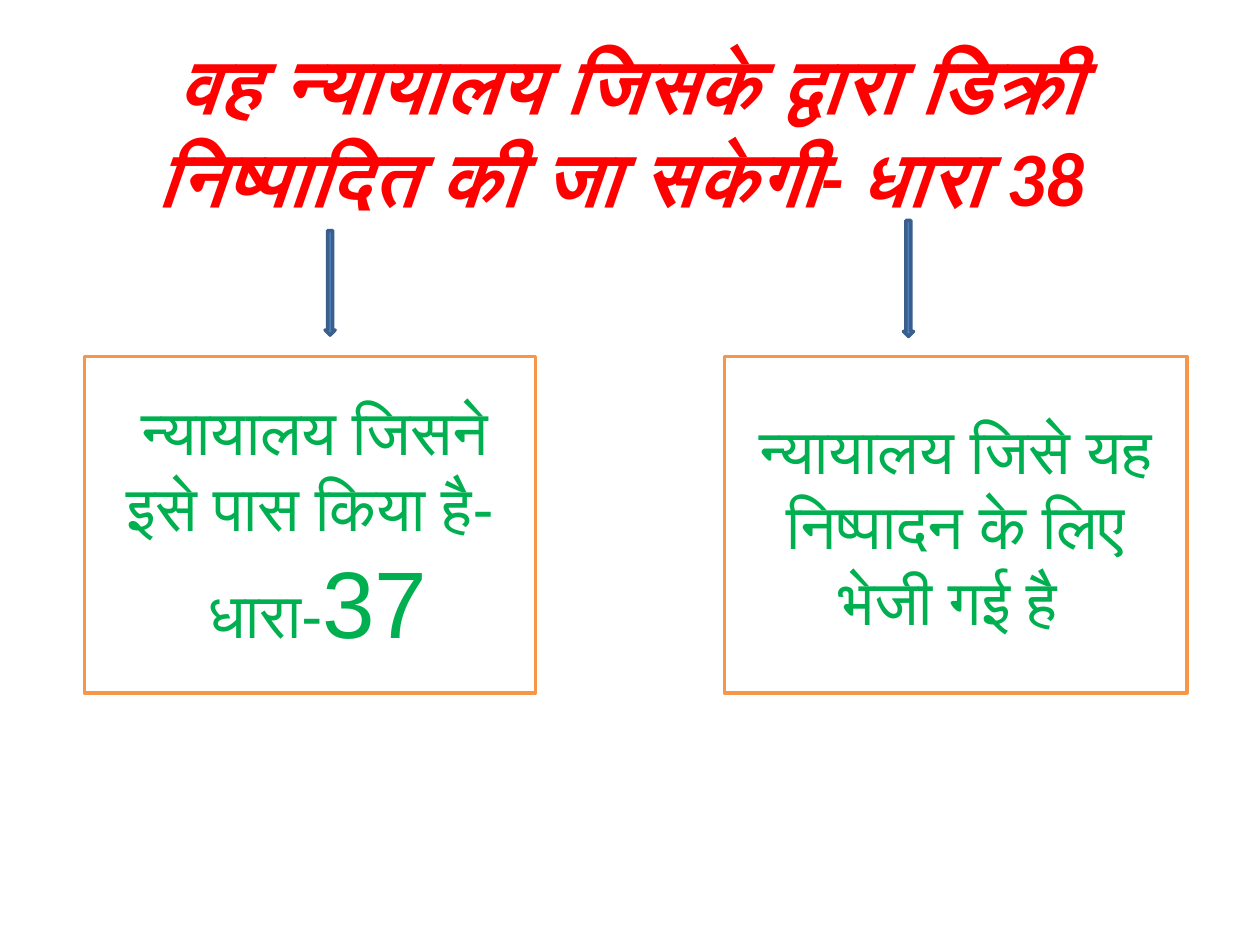
from pptx import Presentation
from pptx.dml.color import RGBColor
from pptx.enum.shapes import MSO_SHAPE
from pptx.enum.text import MSO_ANCHOR, PP_ALIGN
from pptx.util import Inches, Pt


def color(value):
    return RGBColor.from_string(value)


def write(frame, lines, font, tint, bold=None, italic=None):
    """Fill a frame with centred lines, each a list of (text, size) runs."""
    frame.word_wrap = True
    frame.vertical_anchor = MSO_ANCHOR.MIDDLE
    for i, line in enumerate(lines):
        para = frame.paragraphs[0] if i == 0 else frame.add_paragraph()
        para.alignment = PP_ALIGN.CENTER
        for text, size in line:
            run = para.add_run()
            run.text = text
            run.font.name = font
            run.font.size = Pt(size)
            run.font.color.rgb = color(tint)
            run.font.bold = bold
            run.font.italic = italic


def add_block(slide, kind, box, fill, line):
    shape = slide.shapes.add_shape(kind, *map(Inches, box))
    shape.shadow.inherit = False
    shape.fill.solid()
    shape.fill.fore_color.rgb = color(fill)
    shape.line.color.rgb = color(line)
    shape.line.width = Pt(2)
    return shape


def add_title(slide, box, text):
    title = slide.shapes.add_textbox(*map(Inches, box))
    write(title.text_frame, [[(text, 44)]], "Calibri", "FF0000", True, True)


def add_arrow(slide, box):
    add_block(slide, MSO_SHAPE.DOWN_ARROW, box, "4F81BD", "3A5F8C")


def add_court(slide, box, lines):
    court = add_block(slide, MSO_SHAPE.RECTANGLE, box, "FFFFFF", "F79646")
    write(court.text_frame, lines, "Arial", "00B050")


def main():
    deck = Presentation()
    deck.slide_width, deck.slide_height = Inches(10), Inches(7.5)
    slide = deck.slides.add_slide(deck.slide_layouts[6])

    # Heading
    add_title(slide, (0.5, 0.3, 9, 1.45),
              "वह न्यायालय जिसके द्वारा डिक्री निष्पादित की जा सकेगी- धारा 38 ")

    # Arrows from the heading to the two courts
    add_arrow(slide, (2.58, 1.83, 0.08, 0.83))
    add_arrow(slide, (7.17, 1.75, 0.08, 0.92))

    # Court that passed the decree, and court it was sent to
    add_court(slide, (0.67, 2.83, 3.58, 2.67), [
        [(" ", 24), ("न्यायालय जिसने इसे पास किया है-", 36)],
        [(" धारा-", 36), ("37", 54)],
    ])
    add_court(slide, (5.75, 2.83, 3.67, 2.67), [
        [("न्यायालय जिसे यह निष्पादन के लिए भेजी गई है ", 36)],
    ])

    deck.save("out.pptx")


if __name__ == "__main__":
    main()
